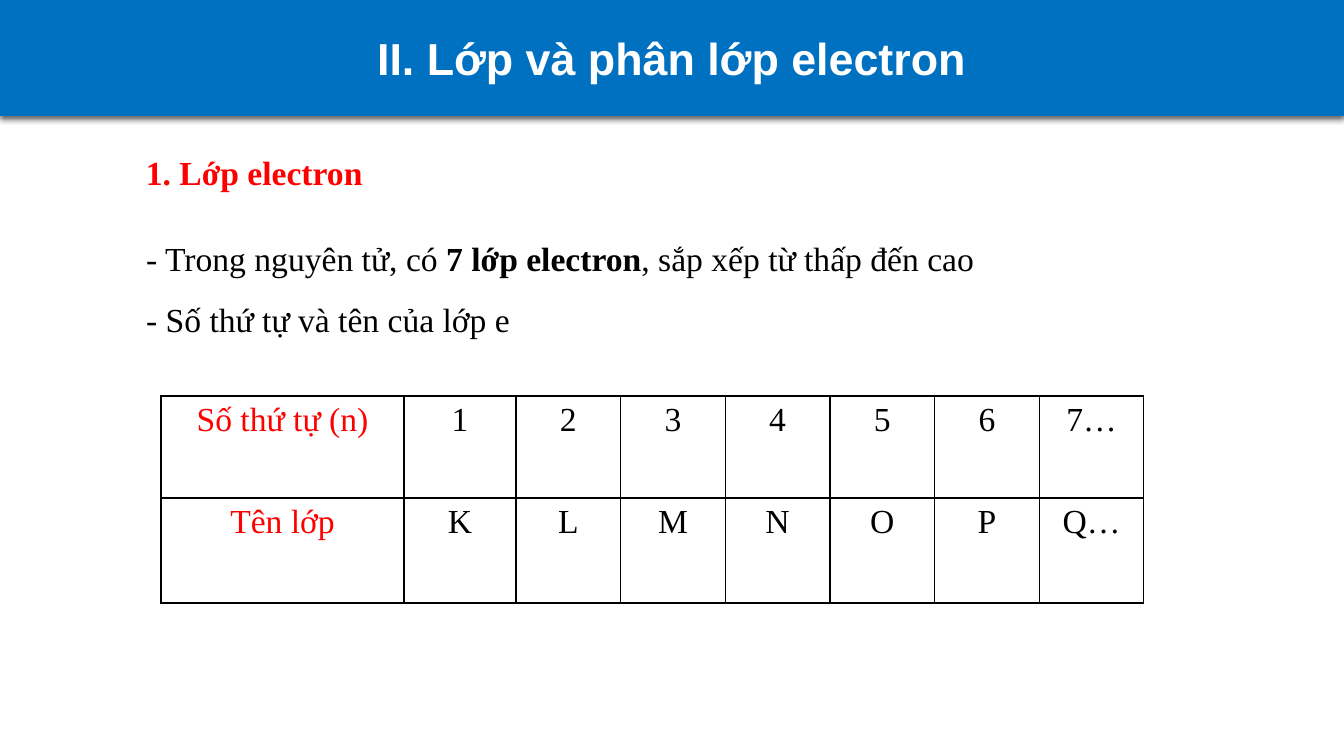
"""Build a slide on electron shells with a table of shell numbers and names."""
from dataclasses import dataclass

from lxml.etree import SubElement
from pptx import Presentation
from pptx.dml.color import RGBColor
from pptx.enum.text import MSO_ANCHOR, MSO_AUTO_SIZE, PP_ALIGN
from pptx.oxml import parse_xml
from pptx.oxml.ns import nsdecls, qn
from pptx.util import Emu, Pt

TITLE = "II. Lớp và phân lớp electron"
HEADING = "1. Lớp electron"
POINTS = [
    [("- Trong nguyên tử, có ", False), ("7 lớp electron", True),
     (", sắp xếp từ thấp đến cao", False)],
    [("- Số thứ tự và tên của lớp e", False)],
]
SHELLS = [
    ("Số thứ tự (n)", "1", "2", "3", "4", "5", "6", "7…"),
    ("Tên lớp", "K", "L", "M", "N", "O", "P", "Q…"),
]

SLIDE_SIZE = (1344, 756)
BANNER_BOX = (0, 0, 1344, 116)
HEADING_BOX = (136, 147, 239, 50)
POINTS_BOX = (136, 213, 1102, 132)
SHELLS_BOX = (161, 396, 983, 207)
LABEL_WIDTH, FIRST_WIDTH = 243, 112
ROW_HEIGHTS = (102, 105)
CELL_INSET = 7


@dataclass(frozen=True)
class Theme:
    banner: str = "0070C0"
    light: str = "FFFFFF"
    accent: str = "FF0000"
    ink: str = "000000"
    title_font: str = "Arial"
    body_font: str = "Times New Roman"
    title_size: int = 32
    body_size: int = 24
    border: int = 1


THEME = Theme()


def px(length):
    return Emu(round(length * 914400 / 100.8))


def place(part, box):
    part.left, part.top, part.width, part.height = map(px, box)


def add_run(paragraph, words, color, bold=False,
            font=THEME.body_font, size=THEME.body_size):
    run = paragraph.add_run()
    run.text = words
    run.font.name = font
    run.font.size = Pt(size)
    run.font.bold = bold
    run.font.color.rgb = RGBColor.from_string(color)


def add_banner(slide):
    banner = slide.shapes.title
    place(banner, BANNER_BOX)
    banner.fill.solid()
    banner.fill.fore_color.rgb = RGBColor.from_string(THEME.banner)
    banner.line.fill.background()
    banner._element.spPr.append(parse_xml(
        f'<a:effectLst {nsdecls("a")}><a:outerShdw blurRad="{Pt(4.5)}" dist="{Pt(1.5)}" '
        f'dir="5400000" algn="t" rotWithShape="0"><a:srgbClr val="{THEME.ink}">'
        '<a:alpha val="63000"/></a:srgbClr></a:outerShdw></a:effectLst>'))
    frame = banner.text_frame
    frame.vertical_anchor = MSO_ANCHOR.MIDDLE
    frame.auto_size = MSO_AUTO_SIZE.NONE
    frame.paragraphs[0].alignment = PP_ALIGN.CENTER
    add_run(frame.paragraphs[0], TITLE, THEME.light, True,
            THEME.title_font, THEME.title_size)


def add_heading(slide):
    frame = slide.shapes.add_textbox(*map(px, HEADING_BOX)).text_frame
    frame.word_wrap = False
    frame.auto_size = MSO_AUTO_SIZE.SHAPE_TO_FIT_TEXT
    add_run(frame.paragraphs[0], HEADING, THEME.accent, True)


def add_points(slide):
    body = slide.placeholders[1]
    place(body, POINTS_BOX)
    frame = body.text_frame
    frame.auto_size = MSO_AUTO_SIZE.NONE
    for index, point in enumerate(POINTS):
        paragraph = frame.add_paragraph() if index else frame.paragraphs[0]
        paragraph.alignment = PP_ALIGN.JUSTIFY
        paragraph.line_spacing = 1.5
        paragraph.space_before = Pt(0)
        properties = paragraph._p.get_or_add_pPr()
        properties.set("marL", "0")
        properties.set("indent", "0")
        SubElement(properties, qn("a:buNone"))
        for words, bold in point:
            add_run(paragraph, words, THEME.ink, bold)


def fill_cell(cell, words, color):
    cell.margin_left = cell.margin_right = px(CELL_INSET)
    cell.margin_top = cell.margin_bottom = 0
    cell.fill.background()
    for index, side in enumerate(("lnL", "lnR", "lnT", "lnB")):
        cell._tc.get_or_add_tcPr().insert(index, parse_xml(
            f'<a:{side} {nsdecls("a")} w="{Pt(THEME.border)}"><a:solidFill>'
            f'<a:srgbClr val="{THEME.ink}"/></a:solidFill></a:{side}>'))
    paragraph = cell.text_frame.paragraphs[0]
    paragraph.alignment = PP_ALIGN.CENTER
    paragraph.line_spacing = 1.15
    add_run(paragraph, words, color)


def add_shells(slide):
    count = len(SHELLS[0])
    table = slide.shapes.add_table(len(SHELLS), count, *map(px, SHELLS_BOX)).table
    table.first_row = table.horz_banding = False
    other_width = (SHELLS_BOX[2] - LABEL_WIDTH - FIRST_WIDTH) / (count - 2)
    widths = [LABEL_WIDTH, FIRST_WIDTH] + [other_width] * (count - 2)
    for column, width in zip(table.columns, widths):
        column.width = px(width)
    for row, height, shells in zip(table.rows, ROW_HEIGHTS, SHELLS):
        row.height = px(height)
        for index, (cell, words) in enumerate(zip(row.cells, shells)):
            fill_cell(cell, words, THEME.ink if index else THEME.accent)


def main():
    deck = Presentation()
    deck.slide_width, deck.slide_height = map(px, SLIDE_SIZE)
    slide = deck.slides.add_slide(deck.slide_layouts[1])
    add_banner(slide)
    add_heading(slide)
    add_points(slide)
    add_shells(slide)
    deck.save("out.pptx")


if __name__ == "__main__":
    main()
